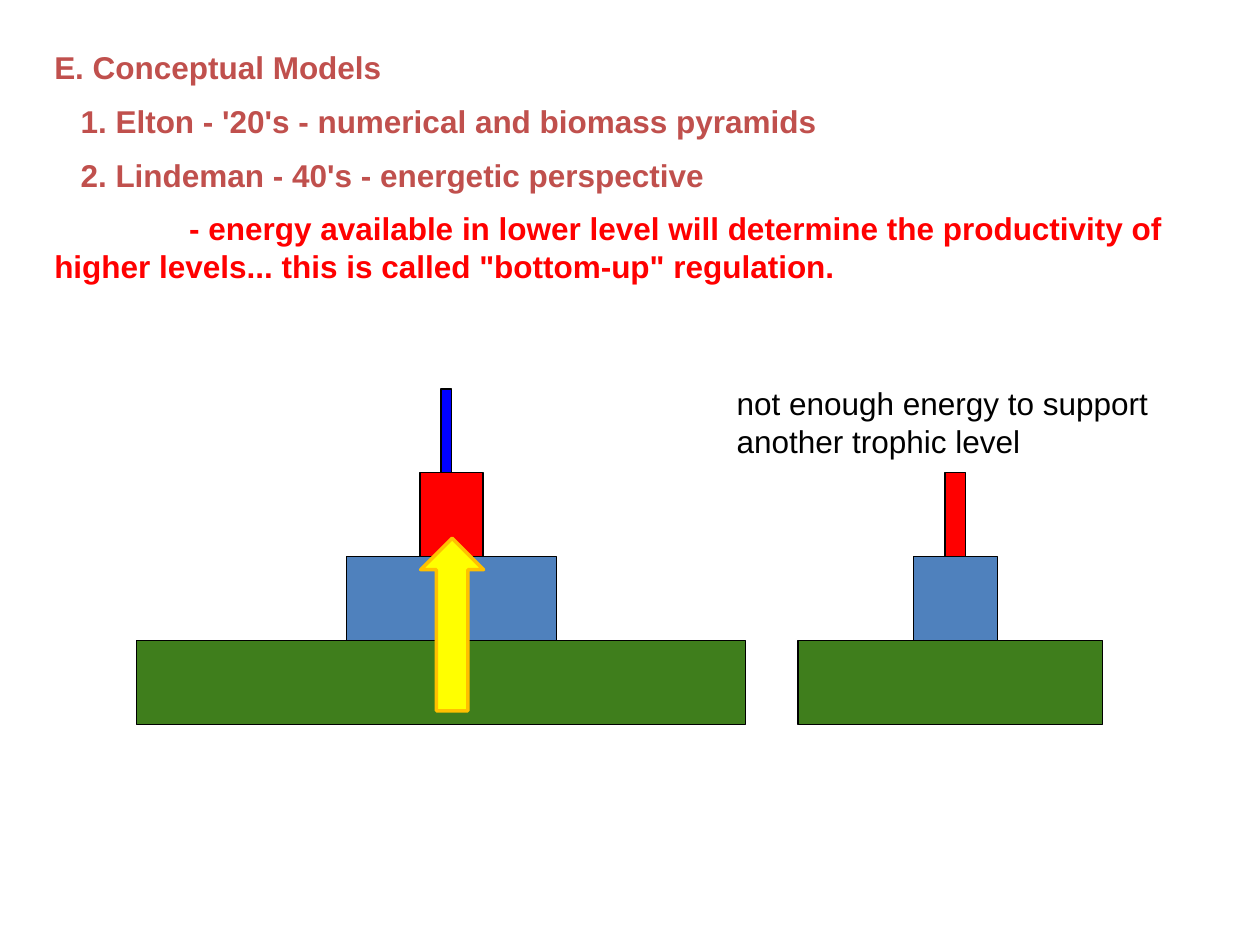
from pptx import Presentation
from pptx.dml.color import RGBColor
from pptx.enum.shapes import MSO_SHAPE
from pptx.enum.text import MSO_ANCHOR, MSO_AUTO_SIZE, PP_ALIGN
from pptx.oxml.ns import qn
from pptx.util import Cm, Pt
from lxml import etree

BRICK, RED, BLACK = "C0504D", "FF0000", "000000"
GREEN, STEEL, BLUE = "3F7E1C", "4F81BD", "0000FF"
YELLOW, AMBER = "FFFF00", "FFC000"

LEVEL_HEIGHT = 1.69
BASE_TOP = 12.91

# Each pyramid lists its trophic levels from the bottom up: left, width, fill
PYRAMIDS = [
    [(2.75, 12.28, GREEN), (6.99, 4.23, STEEL), (8.47, 1.27, RED), (8.89, 0.21, BLUE)],
    [(16.09, 6.14, GREEN), (18.42, 1.69, STEEL), (19.05, 0.42, RED)],
]

# Text, first-line indent, colour
MODELS = [
    ("1. Elton - '20's - numerical and biomass pyramids", 0.53, BRICK),
    ("2. Lindeman - 40's - energetic perspective", 0.53, BRICK),
    ("- energy available in lower level will determine the productivity of "
     "higher levels... this is called \"bottom-up\" regulation.", 2.72, RED),
]


def color(hex_string):
    return RGBColor.from_string(hex_string)


def apply_formats(target, formats):
    for name, value in formats.items():
        setattr(target, name, value)


class PageBuilder:
    """Draws elements in one shared style on the current slide."""

    font = {"name": "Arial", "size": Pt(18)}
    frame = {"word_wrap": True, "auto_size": MSO_AUTO_SIZE.NONE,
             "vertical_anchor": MSO_ANCHOR.TOP}

    def __init__(self, page):
        self.page = page

    def place(self, box, left, top, width, height):
        apply_formats(box, {"left": Cm(left), "top": Cm(top),
                            "width": Cm(width), "height": Cm(height)})
        apply_formats(box.text_frame, self.frame)

    def add_span(self, para, text, fill, bold=False):
        apply_formats(para, {"alignment": PP_ALIGN.LEFT, "space_before": Pt(0)})
        span = para.add_run()
        span.text = text
        apply_formats(span.font, {**self.font, "bold": bold})
        span.font.color.rgb = color(fill)

    def title(self, text, *area):
        box = self.page.shapes.title
        self.place(box, *area)
        self.add_span(box.text_frame.paragraphs[0], text, BRICK, bold=True)

    def outline(self, items, *area):
        box = self.page.placeholders[1]
        self.place(box, *area)
        for number, (text, indent, fill) in enumerate(items):
            para = box.text_frame.add_paragraph() if number else box.text_frame.paragraphs[0]
            properties = para._p.get_or_add_pPr()
            properties.set("marL", "0")
            properties.set("indent", str(Cm(indent)))
            etree.SubElement(properties, qn("a:buNone"))
            self.add_span(para, text, fill, bold=True)
            if number:
                para.space_before = Pt(9)

    def note(self, text, *area):
        box = self.page.shapes.add_textbox(0, 0, 0, 0)
        self.place(box, *area)
        self.add_span(box.text_frame.paragraphs[0], text, BLACK)

    def shape(self, kind, left, top, width, height, fill, line=BLACK, weight=0.75):
        shape = self.page.shapes.add_shape(kind, Cm(left), Cm(top), Cm(width), Cm(height))
        shape.shadow.inherit = False
        shape.fill.solid()
        shape.fill.fore_color.rgb = color(fill)
        shape.line.color.rgb = color(line)
        shape.line.width = Pt(weight)

    def pyramid(self, levels):
        for step, (left, width, fill) in enumerate(levels):
            self.shape(MSO_SHAPE.RECTANGLE, left, BASE_TOP - step * LEVEL_HEIGHT,
                       width, LEVEL_HEIGHT, fill)


def main():
    deck = Presentation()
    apply_formats(deck, {"slide_width": Cm(25.4), "slide_height": Cm(19.05)})
    builder = PageBuilder(deck.slides.add_slide(deck.slide_layouts[1]))
    builder.title("E. Conceptual Models", 0.84, 0.84, 23.7, 1.05)
    builder.outline(MODELS, 0.84, 1.93, 23.7, 4.5)
    for levels in PYRAMIDS:
        builder.pyramid(levels)
    builder.note("not enough energy to support another trophic level", 14.6, 7.62, 9.32, 1.78)
    builder.shape(MSO_SHAPE.UP_ARROW, 8.48, 10.85, 1.27, 3.48, YELLOW, AMBER, 2)
    deck.save("out.pptx")


if __name__ == "__main__":
    main()
